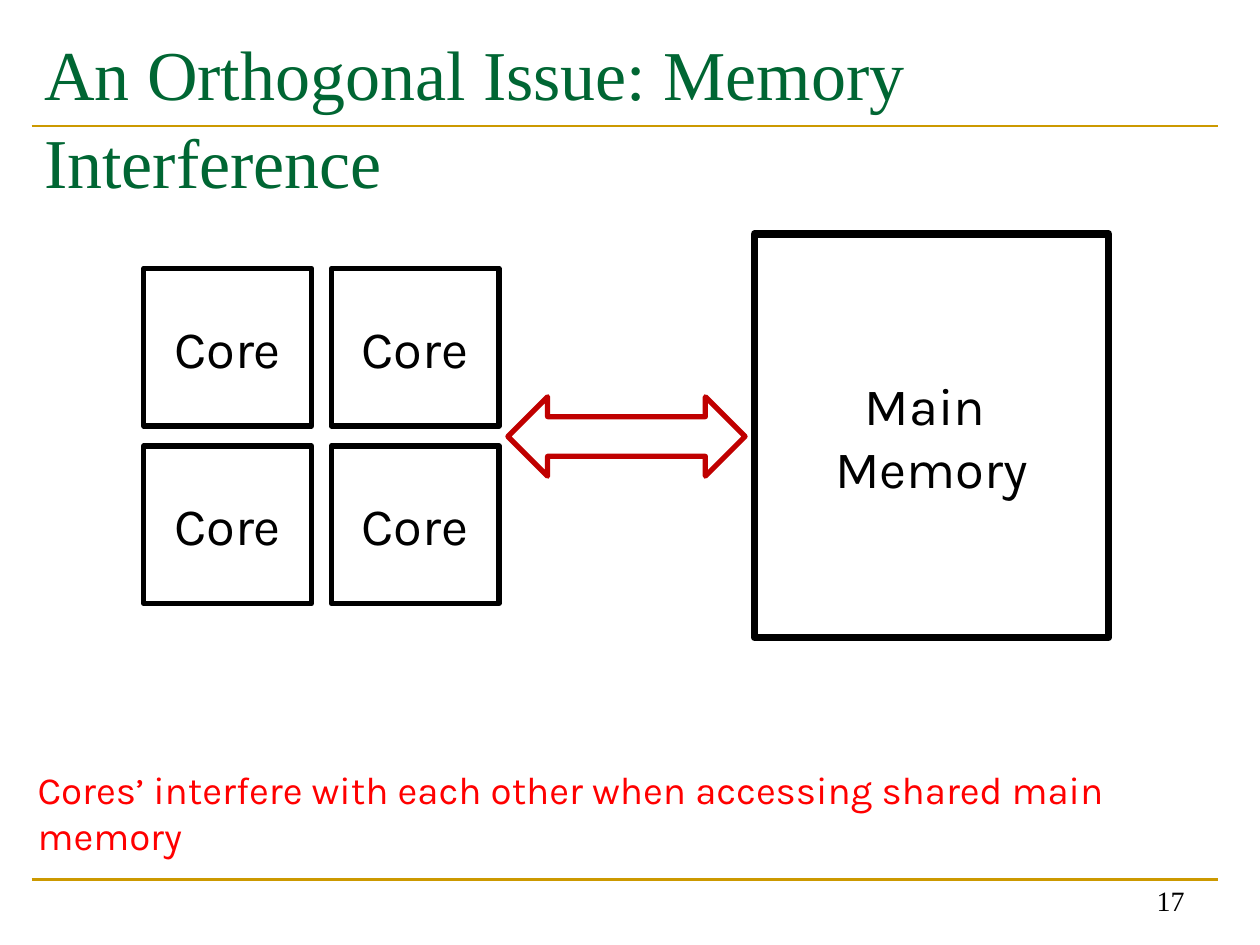
from dataclasses import dataclass
from itertools import product

from lxml.etree import SubElement
from pptx import Presentation
from pptx.dml.color import RGBColor
from pptx.enum.shapes import MSO_CONNECTOR as Link, MSO_SHAPE as Form
from pptx.enum.text import MSO_ANCHOR as Anchor, MSO_AUTO_SIZE as Fit, PP_ALIGN as Align
from pptx.oxml.ns import qn
from pptx.util import Cm, Pt


@dataclass
class Box:
    left: float
    top: float
    width: float
    height: float

    def place(self) -> list:
        return [Cm(v) for v in (self.left, self.top, self.width, self.height)]


@dataclass
class Style:
    size: float
    font: str
    color: str
    align: Align = Align.LEFT
    anchor: Anchor = Anchor.TOP
    space: float = 1.0


@dataclass
class Block:
    box: Box
    text: str
    line: float = 3
    color: str = "000000"
    form: Form = Form.RECTANGLE


SERIF, SANS = "Times New Roman", "Karla"
TITLE = Style(40, SERIF, "006633", space=1.04)
LABEL = Style(30, SANS, "000000", Align.CENTER, Anchor.MIDDLE)
NOTE = Style(22, SANS, "FF0000")
PAGE = Style(16, SERIF, "000000", Align.RIGHT, Anchor.BOTTOM)


def paint(color: str) -> RGBColor:
    return RGBColor.from_string(color)


def apply(item, values: dict) -> None:
    for name, value in values.items():
        setattr(item, name, value)


def write(shape, text: str, style: Style) -> None:
    frame = shape.text_frame
    frame.text = text
    apply(frame, {"word_wrap": True, "auto_size": Fit.NONE,
                  "vertical_anchor": style.anchor})
    for para in frame.paragraphs:
        apply(para, {"alignment": style.align, "line_spacing": style.space})
        for run in para.runs:
            apply(run.font, {"size": Pt(style.size), "name": style.font})
            run.font.color.rgb = paint(style.color)


def add_text(slide, box: Box, text: str, style: Style) -> None:
    write(slide.shapes.add_textbox(*box.place()), text, style)


def add_block(slide, block: Block) -> None:
    shape = slide.shapes.add_shape(block.form, *block.box.place())
    shape.shadow.inherit = False
    shape.fill.background()
    shape.line.width = Pt(block.line)
    shape.line.color.rgb = paint(block.color)
    if block.text:
        write(shape, block.text, LABEL)


def add_rule(slide, top: float) -> None:
    rule = slide.shapes.add_connector(
        Link.STRAIGHT, Cm(0.64), Cm(top), Cm(24.56), Cm(top))
    rule.line.width = Pt(1.5)
    rule.line.color.rgb = paint("CC9900")
    SubElement(rule._element.spPr, qn("a:effectLst"))


def main() -> None:
    deck = Presentation()
    apply(deck, {"slide_width": Cm(25.4), "slide_height": Cm(19.05)})
    slide = deck.slides.add_slide(deck.slide_layouts[5])

    for top in (17.73, 2.54):
        add_rule(slide, top)

    title = slide.shapes.title
    names = ("left", "top", "width", "height")
    apply(title, dict(zip(names, Box(0.64, 0.43, 24.76, 2.97).place())))
    write(title, "An Orthogonal Issue: Memory Interference", TITLE)

    cores = [Block(Box(2.9 + 3.78 * col, 5.41 + 3.58 * row, 3.38, 3.18), "Core")
             for row, col in product(range(2), repeat=2)]
    memory = Block(Box(15.21, 4.72, 7.14, 8.13), "Main \nMemory", 4.32)
    arrow = Block(Box(10.24, 8, 4.78, 1.6), "", 3, "C00000", Form.LEFT_RIGHT_ARROW)
    for block in (memory, arrow, *cores):
        add_block(slide, block)

    add_text(slide, Box(18.21, 17.35, 5.92, 1.27), "17", PAGE)
    add_text(slide, Box(0.51, 15.32, 24.64, 1.19),
             "Cores’ interfere with each other when accessing shared main memory", NOTE)
    deck.save("out.pptx")


if __name__ == "__main__":
    main()
